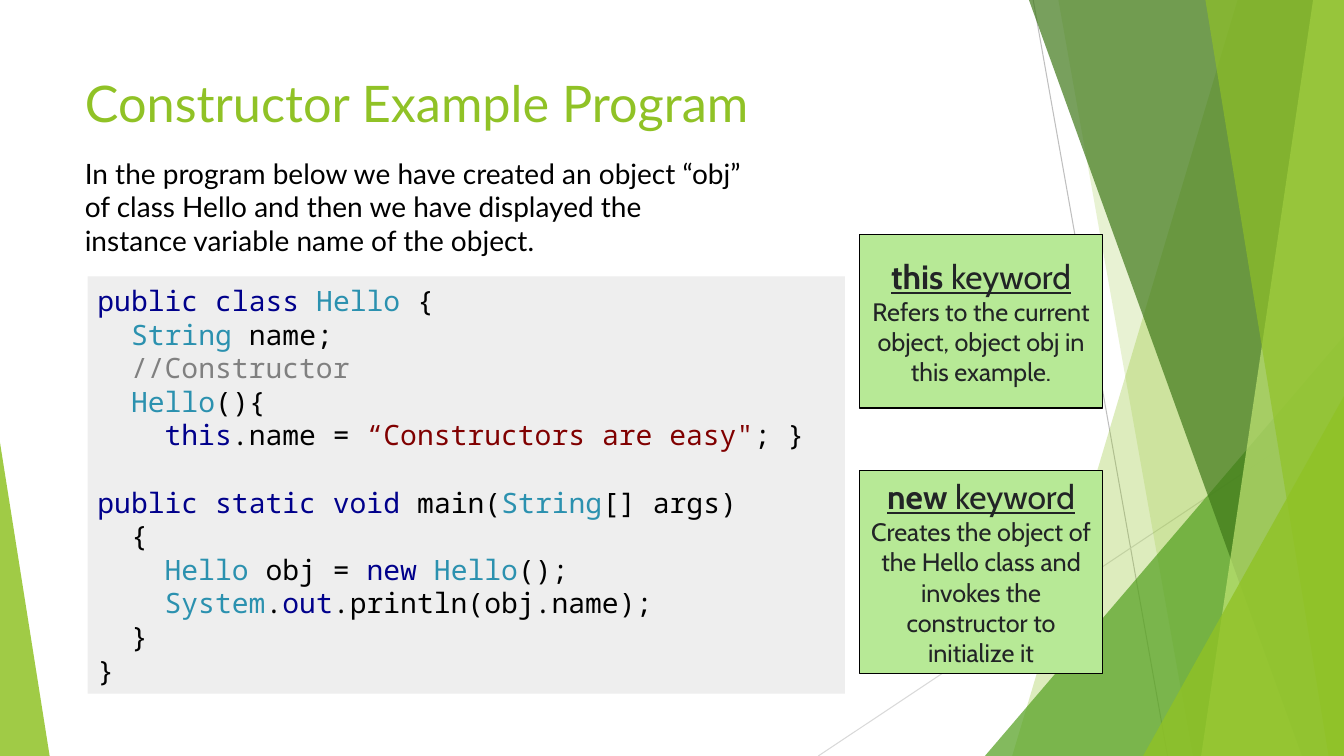
"""Build the slide that explains a Java constructor example."""
from dataclasses import dataclass

from lxml import etree
from pptx import Presentation
from pptx.dml.color import RGBColor
from pptx.enum.shapes import MSO_CONNECTOR, MSO_SHAPE
from pptx.enum.text import MSO_ANCHOR, PP_ALIGN
from pptx.oxml.ns import qn
from pptx.util import Pt

STRAIGHT = MSO_CONNECTOR.STRAIGHT
RECTANGLE, TRIANGLE = MSO_SHAPE.RECTANGLE, MSO_SHAPE.ISOSCELES_TRIANGLE
TOP, MIDDLE = MSO_ANCHOR.TOP, MSO_ANCHOR.MIDDLE
LEFT, CENTER = PP_ALIGN.LEFT, PP_ALIGN.CENTER


@dataclass(frozen=True)
class Theme:
    """Colours, fonts and type sizes of the slide."""
    lime: str = "90C226"
    green: str = "54A021"
    forest: str = "3F7819"
    pale_lime: str = "C0E474"
    mint: str = "B7E996"
    code_panel: str = "EEEEEE"
    black: str = "000000"
    charcoal: str = "222426"
    keyword: str = "00008B"
    type_name: str = "2B91AF"
    comment: str = "808080"
    string: str = "800000"
    text_font: str = "Lato"
    code_font: str = "Noto Sans Mono"
    card_font: str = "Cabin"
    title_size: int = 36
    heading_size: int = 24
    body_size: int = 20
    card_size: int = 18


theme = Theme()
WIDTH, HEIGHT = 960, 540


def paint(shape, color, opacity=100):
    """Fill a shape with a colour, without line or shadow."""
    shape.shadow.inherit = False
    shape.line.fill.background()
    shape.fill.solid()
    shape.fill.fore_color.rgb = RGBColor.from_string(color)
    if opacity < 100:
        color_element = shape.fill._xPr.find(qn("a:solidFill"))[0]
        alpha = etree.SubElement(color_element, qn("a:alpha"))
        alpha.set("val", str(opacity * 1000))


def add_run(paragraph, text, font, size, color, bold=False, underline=False):
    """Append one formatted run."""
    run = paragraph.add_run()
    run.text = text
    run.font.name = font
    run.font.size = Pt(size)
    run.font.color.rgb = RGBColor.from_string(color)
    run.font.bold = bold
    run.font.underline = underline


presentation = Presentation()
presentation.slide_width, presentation.slide_height = Pt(WIDTH), Pt(HEIGHT)
slide = presentation.slides.add_slide(presentation.slide_layouts[5])
shapes = slide.shapes

hairlines = [
    ((738, 0), (834, HEIGHT), "BFBFBF"),
    ((WIDTH, 290), (584.5, HEIGHT), "D9D9D9"),
]
for start, end, color in hairlines:
    hairline = shapes.add_connector(STRAIGHT, *map(Pt, start + end))
    hairline.line.color.rgb = RGBColor.from_string(color)
    hairline.line.width = Pt(0.75)
    etree.SubElement(hairline._element.spPr, qn("a:effectLst"))

bands_and_triangles = [
    ("band", (884, 723), theme.lime, 30),
    ("band", (756, 852), theme.lime, 20),
    ("triangle", (703.5, 240, 256.5, 1), theme.green, 72),
    ("band", (735, 929.5), theme.forest, 70),
    ("band", (938, 858.5), theme.pale_lime, 70),
    ("band", (861, 949), theme.lime, 65),
    ("triangle", (816.5, 283, 143.5, 1), theme.lime, 80),
    ("triangle", (0, 316, 35.5, 0), theme.lime, 85),
]
for kind, geometry, color, opacity in bands_and_triangles:
    if kind == "band":
        top_x, bottom_x = geometry
        builder = shapes.build_freeform(top_x, 0, scale=Pt(1))
        builder.add_line_segments([(WIDTH, 0), (WIDTH, HEIGHT), (bottom_x, HEIGHT)])
        decoration = builder.convert_to_shape()
    else:
        left, top, width, apex = geometry
        decoration = shapes.add_shape(
            TRIANGLE, Pt(left), Pt(top), Pt(width), Pt(HEIGHT - top))
        decoration.adjustments[0] = apex
    paint(decoration, color, opacity)

title = shapes.title
title.left, title.top, title.width, title.height = Pt(53.5), Pt(48), Pt(677), Pt(104)
title.text_frame.vertical_anchor = TOP
title_paragraph = title.text_frame.paragraphs[0]
title_paragraph.alignment = LEFT
add_run(title_paragraph, "Constructor Example Program",
        theme.text_font, theme.title_size, theme.lime)

introduction = shapes.add_textbox(Pt(53.5), Pt(108), Pt(487.5), Pt(80))
introduction.text_frame.word_wrap = True
add_run(introduction.text_frame.paragraphs[0],
        "In the program below we have created an object “obj” of class Hello and then "
        "we have displayed the instance variable name of the object.",
        theme.text_font, theme.body_size, theme.black)

code_lines = [
    (0, [("public class ", theme.keyword), ("Hello", theme.type_name), (" {", theme.black)]),
    (1, [("String", theme.type_name), (" name;", theme.black)]),
    (1, [("//Constructor", theme.comment)]),
    (1, [("Hello", theme.type_name), ("(){", theme.black)]),
    (2, [("this", theme.keyword), (".name = ", theme.black),
         ("“Constructors are easy\"", theme.string), ("; }", theme.black)]),
    (0, [("public static void", theme.keyword), (" main(", theme.black),
         ("String", theme.type_name), ("[] args)", theme.black)]),
    (1, [("{", theme.black)]),
    (2, [("Hello ", theme.type_name), ("obj = ", theme.black), ("new ", theme.keyword),
         ("Hello", theme.type_name), ("();", theme.black)]),
    (2, [("System", theme.type_name), (".", theme.black), ("out", theme.keyword),
         (".println(obj.name);", theme.black)]),
    (1, [("}", theme.black)]),
    (0, [("}", theme.black)]),
]
CODE_PITCH, CODE_INDENT, MAIN_METHOD = 24, 24, 5
code_panel = shapes.add_shape(RECTANGLE, Pt(62.5), Pt(197.5), Pt(541), Pt(298))
paint(code_panel, theme.code_panel)
code_frame = code_panel.text_frame
code_frame.word_wrap = True
code_frame.vertical_anchor = MIDDLE
for index, (level, tokens) in enumerate(code_lines):
    paragraph = code_frame.add_paragraph() if index else code_frame.paragraphs[0]
    paragraph.alignment = LEFT
    paragraph.line_spacing = Pt(CODE_PITCH)
    paragraph.space_before = Pt(CODE_PITCH if index == MAIN_METHOD else 0)
    paragraph._p.get_or_add_pPr().set("marL", str(Pt(level * CODE_INDENT)))
    for text, color in tokens:
        add_run(paragraph, text, theme.code_font, theme.body_size, color)

keyword_cards = [
    (167.5, 124, "this ", "Refers to the current object, object obj in this example."),
    (336, 145, "new ", "Creates the object of the Hello class and invokes the "
                       "constructor to initialize it"),
]
for top, height, keyword, description in keyword_cards:
    card = shapes.add_shape(RECTANGLE, Pt(614), Pt(top), Pt(173.5), Pt(height))
    paint(card, theme.mint)
    card.line.color.rgb = RGBColor.from_string(theme.black)
    card.line.width = Pt(0.75)
    card_frame = card.text_frame
    card_frame.word_wrap = True
    card_frame.vertical_anchor = MIDDLE
    heading, explanation = card_frame.paragraphs[0], card_frame.add_paragraph()
    heading.alignment = explanation.alignment = CENTER
    for text, bold in ((keyword, True), ("keyword", False)):
        add_run(heading, text, theme.card_font, theme.heading_size, theme.charcoal,
                bold, underline=True)
    add_run(explanation, description, theme.card_font, theme.card_size, theme.charcoal)

presentation.save("out.pptx")
